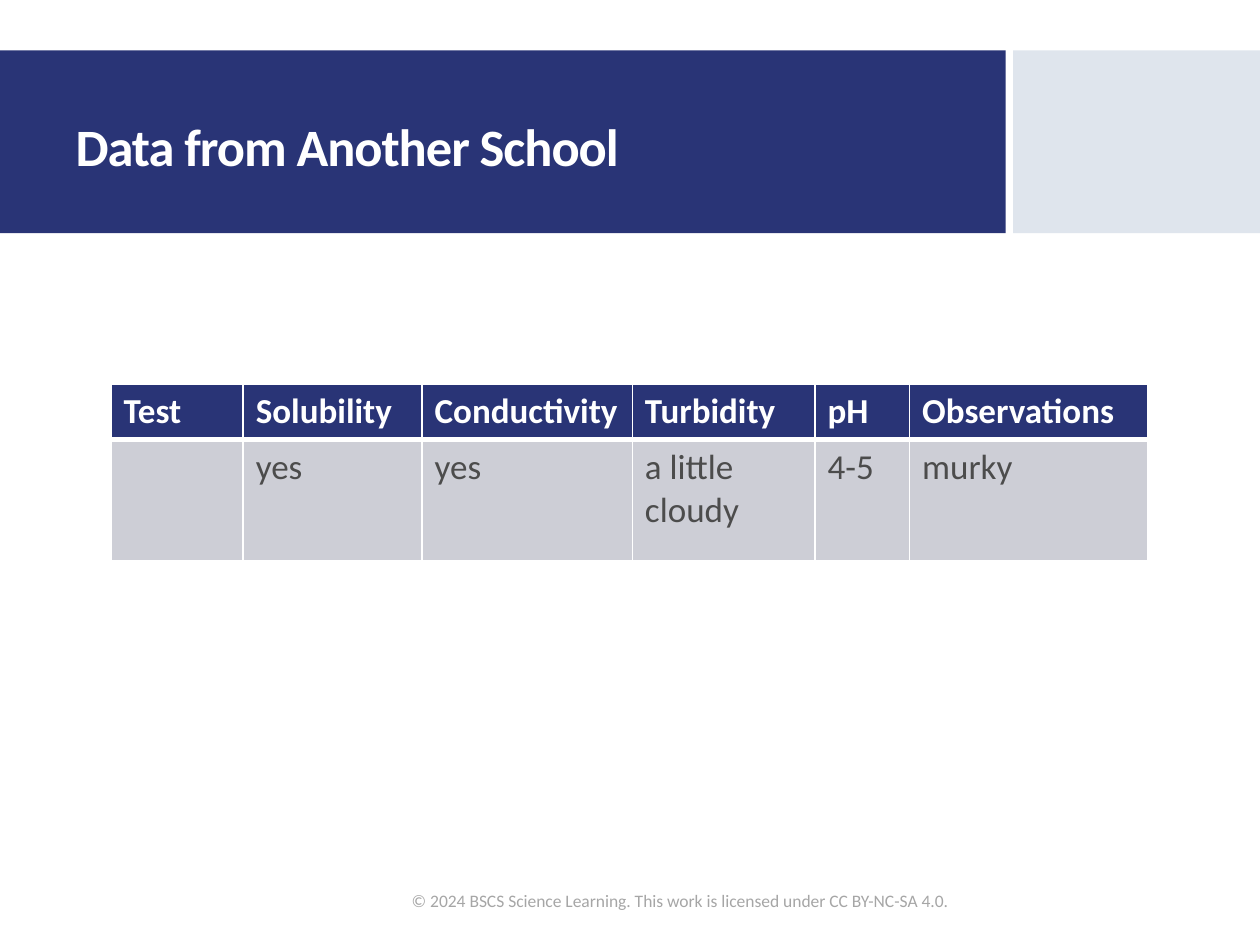
from lxml import etree
from pptx import Presentation
from pptx.dml.color import RGBColor
from pptx.enum.shapes import MSO_SHAPE
from pptx.enum.text import MSO_ANCHOR, MSO_AUTO_SIZE, PP_ALIGN
from pptx.oxml.ns import qn
from pptx.util import Pt

RECTANGLE = MSO_SHAPE.RECTANGLE
MIDDLE = MSO_ANCHOR.MIDDLE
LEFT = PP_ALIGN.LEFT
NO_AUTOFIT = MSO_AUTO_SIZE.NONE
TITLE_ONLY = 5

FONT = "Calibri"
COLORS = {
    "navy": "293476",
    "pale": "DFE5ED",
    "row": "CDCED6",
    "body": "4C4C4C",
    "footer": "A6A6A6",
    "white": "FFFFFF",
}

BAND_TOP, BAND_HEIGHT = 28.8, 104.4
COLUMN_WIDTHS = [75.6, 102.2, 120.2, 104.4, 54, 136.1]
ROW_HEIGHTS = [29.5, 69.1]
RESULTS = [
    ["Test", "Solubility", "Conductivity", "Turbidity", "pH", "Observations"],
    ["", "yes", "yes", "a little cloudy", "4-5", "murky"],
]


def rgb(name):
    return RGBColor.from_string(COLORS[name])


def style_font(font, size, color, bold=False):
    font.name = FONT
    font.size = Pt(size)
    font.bold = bold
    font.color.rgb = rgb(color)


def add_run(paragraph, text, size, color, bold=False):
    run = paragraph.add_run()
    run.text = text
    style_font(run.font, size, color, bold)
    return run


def add_band(slide, left, width, color):
    band = slide.shapes.add_shape(
        RECTANGLE, Pt(left), Pt(BAND_TOP), Pt(width), Pt(BAND_HEIGHT))
    band.shadow.inherit = False
    band.fill.solid()
    band.fill.fore_color.rgb = rgb(color)
    band.line.fill.background()


def format_title(slide, text):
    """Fill the title placeholder and bring it in front of the bands."""
    title = slide.shapes.title
    title.left, title.top = Pt(36), Pt(41.8)
    title.width, title.height = Pt(499), Pt(87.8)
    frame = title.text_frame
    frame.auto_size = NO_AUTOFIT
    frame.vertical_anchor = MIDDLE
    heading = frame.paragraphs[0]
    heading.alignment = LEFT
    heading.line_spacing = 0.9
    run = add_run(heading, text, 30, "white", bold=True)
    run.font._element.set("spc", "-60")
    slide.shapes._spTree.append(title._element)


def set_borders(cell, top, bottom):
    """Draw white cell borders; the sides are always 1 pt."""
    properties = cell._tc.get_or_add_tcPr()
    widths = {"lnL": 1, "lnR": 1, "lnT": top, "lnB": bottom}
    for position, (side, width) in enumerate(widths.items()):
        line = etree.Element(qn(f"a:{side}"), w=str(Pt(width)))
        fill = etree.SubElement(line, qn("a:solidFill"))
        etree.SubElement(fill, qn("a:srgbClr"), val=COLORS["white"])
        properties.insert(position, line)


def add_results_table(slide):
    table = slide.shapes.add_table(
        len(RESULTS), len(COLUMN_WIDTHS), Pt(63.4), Pt(219.6),
        Pt(sum(COLUMN_WIDTHS)), Pt(sum(ROW_HEIGHTS))).table
    for column, width in zip(table.columns, COLUMN_WIDTHS):
        column.width = Pt(width)
    for row_index, (row, height) in enumerate(zip(table.rows, ROW_HEIGHTS)):
        row.height = Pt(height)
        is_header = row_index == 0
        for cell, text in zip(row.cells, RESULTS[row_index]):
            cell.fill.solid()
            cell.fill.fore_color.rgb = rgb("navy" if is_header else "row")
            set_borders(cell, 1 if is_header else 3, 3 if is_header else 1)
            paragraph = cell.text_frame.paragraphs[0]
            color = "white" if is_header else "body"
            if text:
                add_run(paragraph, text, 20, color, is_header)
            else:
                style_font(paragraph.font, 20, color)


def add_license_line(slide, text):
    box = slide.shapes.add_textbox(Pt(228.2), Pt(500.4), Pt(349.2), Pt(28.8))
    frame = box.text_frame
    frame.word_wrap = True
    frame.vertical_anchor = MIDDLE
    add_run(frame.paragraphs[0], text, 10, "footer")


def main():
    presentation = Presentation()
    presentation.slide_width, presentation.slide_height = Pt(720), Pt(540)
    slide = presentation.slides.add_slide(
        presentation.slide_layouts[TITLE_ONLY])
    add_band(slide, 0, 574.6, "navy")
    add_band(slide, 578.9, 141.1, "pale")
    format_title(slide, "Data from Another School")
    add_results_table(slide)
    add_license_line(
        slide,
        "© 2024 BSCS Science Learning. "
        "This work is licensed under CC BY-NC-SA 4.0.")
    presentation.save("out.pptx")


if __name__ == "__main__":
    main()
